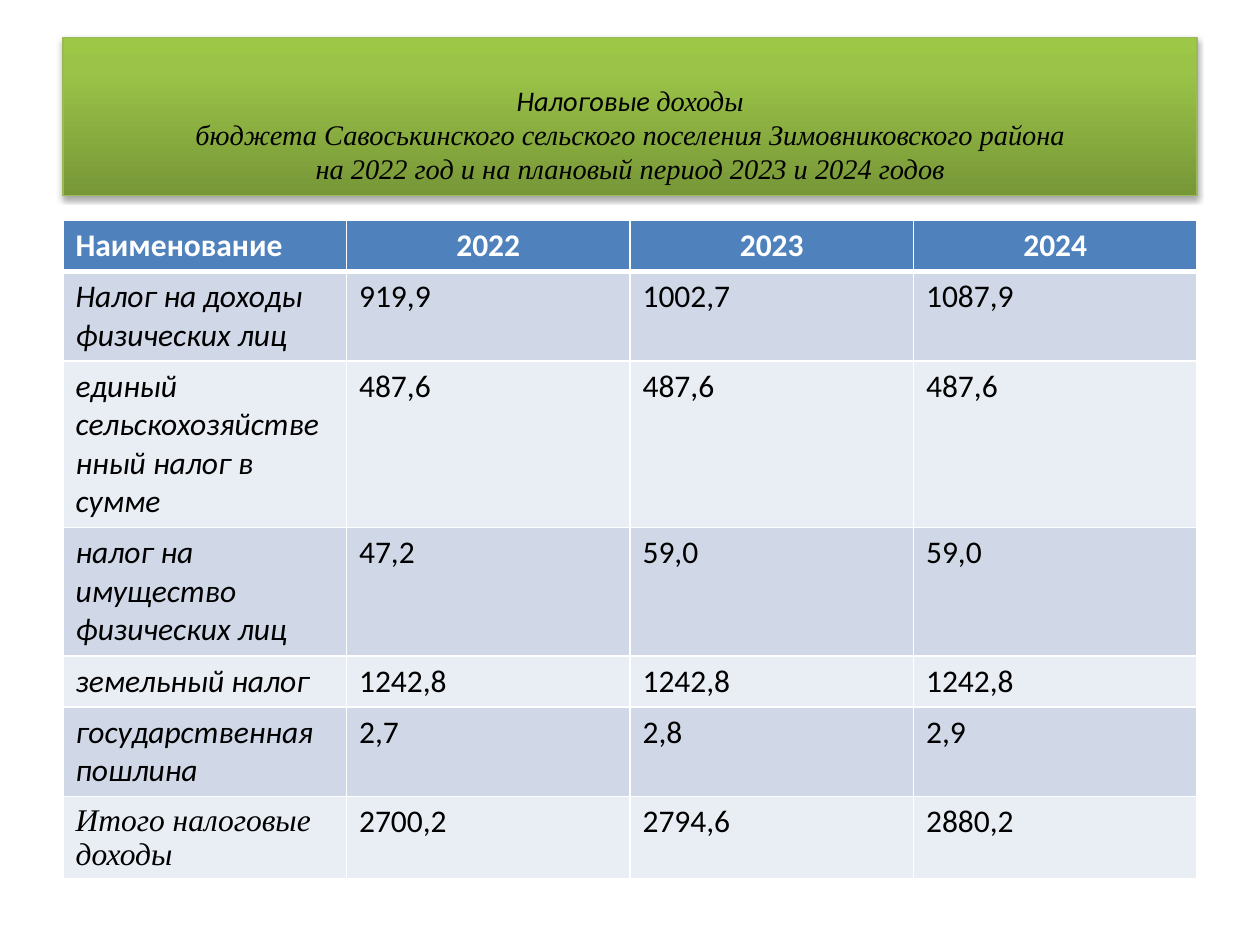
from lxml import etree
from pptx import Presentation
from pptx import util as u
from pptx.dml import color
from pptx.enum import text
from pptx.oxml import ns, parse_xml

COLORS = {
    "white": "FFFFFF", "black": "000000", "header": "4F81BD",
    "odd": "D0D8E8", "even": "E9EDF4", "outline": "98B955",
    "green_dark": "779737", "green_mid": "9BC348", "green_light": "9DC746",
}
SANS, SERIF = "Calibri", "Times New Roman"
TITLE = [
    ("Налоговые ", SANS),
    ("доходы\vбюджета Савоськинского сельского поселения Зимовниковского района"
     "\vна 2022 год и на плановый период 2023 и 2024 годов", SERIF),
]
ROWS = [
    ("Наименование", "2022", "2023", "2024"),
    ("Налог на доходы физических лиц", "919,9", "1002,7", "1087,9"),
    ("единый сельскохозяйственный налог в сумме", "487,6", "487,6", "487,6"),
    ("налог на имущество физических лиц", "47,2", "59,0", "59,0"),
    ("земельный налог", "1242,8", "1242,8", "1242,8"),
    ("государственная пошлина", "2,7", "2,8", "2,9"),
    ("Итого налоговые доходы", "2700,2", "2794,6", "2880,2"),
]
ROW_HEIGHTS = [0.4, 0.71, 1.32, 1.02, 0.4, 0.71, 0.65]


def rgb(name):
    return color.RGBColor.from_string(COLORS[name])


def add_text(paragraph, content, font=SANS, size=18, ink="black",
             bold=False, italic=False, align=text.PP_ALIGN.LEFT):
    paragraph.alignment = align
    for index, line in enumerate(content.split("\v")):
        if index:
            paragraph.add_line_break()
        run = paragraph.add_run()
        run.text = line
        run.font.name, run.font.size = font, u.Pt(size)
        run.font.bold, run.font.italic = bold, italic
        run.font.color.rgb = rgb(ink)


def add_gradient_and_shadow(shape):
    stops = "".join(
        f'<a:gs pos="{position * 1000}"><a:srgbClr val="{COLORS[name]}"/></a:gs>'
        for position, name in [(0, "green_dark"), (80, "green_mid"), (100, "green_light")])
    properties = shape.element.spPr
    properties.append(parse_xml(
        f'<a:gradFill {ns.nsdecls("a")} rotWithShape="1"><a:gsLst>{stops}</a:gsLst>'
        '<a:lin ang="16200000" scaled="0"/></a:gradFill>'))
    shape.line.color.rgb = rgb("outline")
    shape.line.width = u.Pt(0.75)
    properties.append(parse_xml(
        f'<a:effectLst {ns.nsdecls("a")}><a:outerShdw blurRad="{u.Pt(3.1)}" '
        f'dist="{u.Pt(1.8)}" dir="5400000" rotWithShape="0">'
        f'<a:srgbClr val="{COLORS["black"]}"><a:alpha val="35000"/></a:srgbClr>'
        '</a:outerShdw></a:effectLst>'))


def place_title(slide, left, top, width, height):
    title = slide.shapes.title
    title.left, title.top, title.width, title.height = left, top, width, height
    add_gradient_and_shadow(title)
    frame = title.text_frame
    frame.word_wrap = True
    frame.auto_size = text.MSO_AUTO_SIZE.NONE
    frame.vertical_anchor = text.MSO_ANCHOR.MIDDLE
    frame.margin_top = u.Inches(0.33)
    for content, font in TITLE:
        add_text(frame.paragraphs[0], content, font=font, size=16.2,
                 italic=True, align=text.PP_ALIGN.CENTER)


def set_borders(cell, bottom=1, top=1):
    properties = cell._tc.get_or_add_tcPr()
    widths = {"lnL": 1, "lnR": 1, "lnT": top, "lnB": bottom}
    for index, (tag, width) in enumerate(widths.items()):
        line = etree.Element(ns.qn(f"a:{tag}"), w=str(u.Pt(width)))
        fill = etree.SubElement(line, ns.qn("a:solidFill"))
        etree.SubElement(fill, ns.qn("a:srgbClr"), val=COLORS["white"])
        properties.insert(index, line)


def place_table(slide, left, top, width, height):
    table = slide.shapes.add_table(
        len(ROWS), len(ROWS[0]), left, top, width, height).table
    for row_index, values in enumerate(ROWS):
        table.rows[row_index].height = u.Inches(ROW_HEIGHTS[row_index])
        header = row_index == 0
        total = row_index == len(ROWS) - 1
        band = "header" if header else "odd" if row_index % 2 else "even"
        for column_index, value in enumerate(values):
            label = column_index == 0
            cell = table.cell(row_index, column_index)
            cell.fill.solid()
            cell.fill.fore_color.rgb = rgb(band)
            set_borders(cell, bottom=3 if header else 1, top=3 if row_index == 1 else 1)
            centered = header and not label
            add_text(cell.text_frame.paragraphs[0], value,
                     font=SERIF if total and label else SANS,
                     ink="white" if header else "black",
                     bold=header, italic=label and not header,
                     align=text.PP_ALIGN.CENTER if centered else text.PP_ALIGN.LEFT)


def main():
    presentation = Presentation()
    presentation.slide_width, presentation.slide_height = u.Inches(10), u.Inches(7.5)
    slide = presentation.slides.add_slide(presentation.slide_layouts[5])
    left, width = u.Inches(0.5), u.Inches(9)
    place_title(slide, left, u.Inches(0.3), width, u.Inches(1.25))
    place_table(slide, left, u.Inches(1.75), width, u.Inches(sum(ROW_HEIGHTS)))
    presentation.save("out.pptx")


if __name__ == "__main__":
    main()
